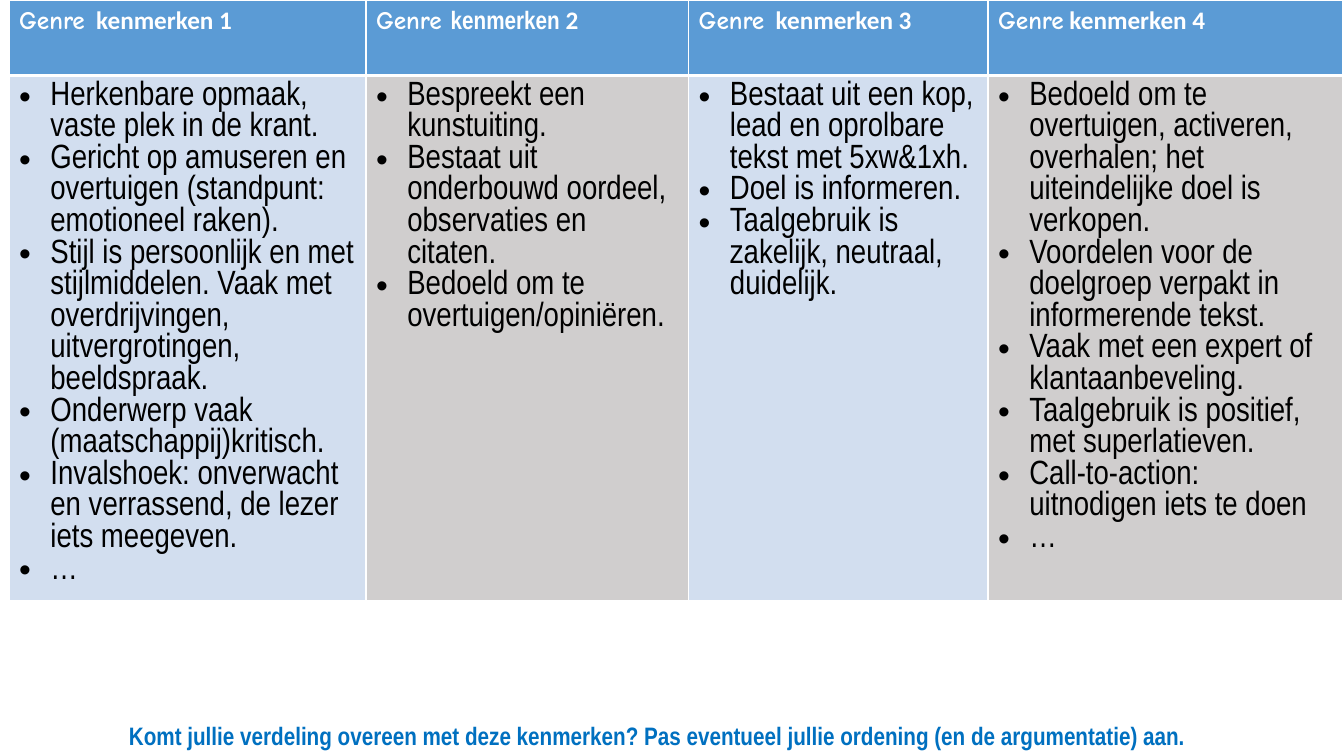
from dataclasses import dataclass

from lxml.etree import SubElement
from pptx import Presentation
from pptx.dml.color import RGBColor
from pptx.oxml.ns import qn
from pptx.util import Inches, Pt

# Content: per column the heading runs (text, font) and the bullet points
NARROW, SANS, COMIC = "Arial Narrow", "Calibri", "Comic Neue"
COLUMNS = [
    {
        "width": 3.54,
        "heading": [("Genre", COMIC), ("  kenmerken 1", SANS)],
        "points": [
            "Herkenbare opmaak, vaste plek in de krant.",
            "Gericht op amuseren en overtuigen (standpunt: emotioneel raken).",
            "Stijl is persoonlijk en met stijlmiddelen. Vaak met overdrijvingen, "
            "uitvergrotingen, beeldspraak.",
            "Onderwerp vaak (maatschappij)kritisch.",
            "Invalshoek: onverwacht en verrassend, de lezer iets meegeven.",
            "…",
        ],
    },
    {
        "width": 3.2,
        "heading": [("Genre ", COMIC), ("kenmerken ", NARROW), ("2", SANS)],
        "points": [
            "Bespreekt een kunstuiting.",
            "Bestaat uit onderbouwd oordeel, observaties en citaten.",
            "Bedoeld om te  overtuigen/opiniëren.",
        ],
    },
    {
        "width": 2.97,
        "heading": [("Genre", COMIC), ("  kenmerken 3", SANS)],
        "points": [
            "Bestaat uit een kop, lead en oprolbare tekst met 5xw&1xh.",
            "Doel is informeren.",
            "Taalgebruik is zakelijk, neutraal, duidelijk.",
        ],
    },
    {
        "width": 3.52,
        "heading": [("Genre", COMIC), (" kenmerken 4", SANS)],
        "points": [
            "Bedoeld om te overtuigen, activeren, overhalen; het uiteindelijke "
            "doel is verkopen.",
            "Voordelen voor de doelgroep verpakt in informerende tekst.",
            "Vaak met een expert of klantaanbeveling.",
            "Taalgebruik is positief, met superlatieven.",
            "Call-to-action: uitnodigen iets te doen",
            "…",
        ],
    },
]
QUESTION = ("Komt jullie verdeling overeen met deze kenmerken? "
            "Pas eventueel jullie ordening (en de argumentatie) aan.")
ROW_HEIGHTS = (0.75, 5.21)


@dataclass(frozen=True)
class Theme:
    white: str = "FFFFFF"
    black: str = "000000"
    header: str = "5B9BD5"
    bands: tuple = ("D2DEEF", "D0CECE")
    question: str = "0070C0"
    small: int = 18
    large: int = 24
    thin: int = 1
    thick: int = 3
    indent: float = 0.31


THEME = Theme()


def add_run(paragraph, text, font, size, color, bold):
    run = paragraph.add_run()
    run.text = text
    run.font.name = font
    run.font.size = Pt(size)
    run.font.bold = bold
    run.font.color.rgb = RGBColor.from_string(color)


def add_bullet(paragraph):
    properties = paragraph._p.get_or_add_pPr()
    properties.set("marL", str(Inches(THEME.indent)))
    properties.set("indent", str(-Inches(THEME.indent)))
    SubElement(properties, qn("a:buFont"), typeface="Arial")
    SubElement(properties, qn("a:buChar"), char="•")


def style_cell(cell, fill, top, bottom):
    """Draw white borders, then fill the cell."""
    properties = cell._tc.get_or_add_tcPr()
    for side, width in zip("LRTB", (THEME.thin, THEME.thin, top, bottom)):
        line = SubElement(properties, qn(f"a:ln{side}"), w=str(Pt(width)))
        SubElement(SubElement(line, qn("a:solidFill")),
                   qn("a:srgbClr"), val=THEME.white)
    cell.fill.solid()
    cell.fill.fore_color.rgb = RGBColor.from_string(fill)


def add_genre_table(slide):
    width = sum(column["width"] for column in COLUMNS)
    table = slide.shapes.add_table(
        len(ROW_HEIGHTS), len(COLUMNS), Inches(0.09), Inches(0),
        Inches(width), Inches(sum(ROW_HEIGHTS))).table
    for row, height in zip(table.rows, ROW_HEIGHTS):
        row.height = Inches(height)

    for index, column in enumerate(COLUMNS):
        table.columns[index].width = Inches(column["width"])

        # Heading
        heading = table.cell(0, index)
        style_cell(heading, THEME.header, THEME.thin, THEME.thick)
        for text, font in column["heading"]:
            add_run(heading.text_frame.paragraphs[0], text, font,
                    THEME.small, THEME.white, True)

        # Bullet points
        body = table.cell(1, index)
        style_cell(body, THEME.bands[index % 2], THEME.thick, THEME.thin)
        frame = body.text_frame
        for number, point in enumerate(column["points"]):
            paragraph = frame.add_paragraph() if number else frame.paragraphs[0]
            add_bullet(paragraph)
            add_run(paragraph, point, NARROW, THEME.large, THEME.black, False)


def add_question(slide):
    box = slide.shapes.add_textbox(
        Inches(1.18), Inches(7.1), Inches(11.58), Inches(0.4))
    box.text_frame.word_wrap = True
    add_run(box.text_frame.paragraphs[0], QUESTION, NARROW,
            THEME.small, THEME.question, True)


def main():
    presentation = Presentation()
    presentation.slide_width = Inches(13.33)
    presentation.slide_height = Inches(7.5)
    slide = presentation.slides.add_slide(presentation.slide_layouts[6])
    add_genre_table(slide)
    add_question(slide)
    presentation.save("out.pptx")


if __name__ == "__main__":
    main()
